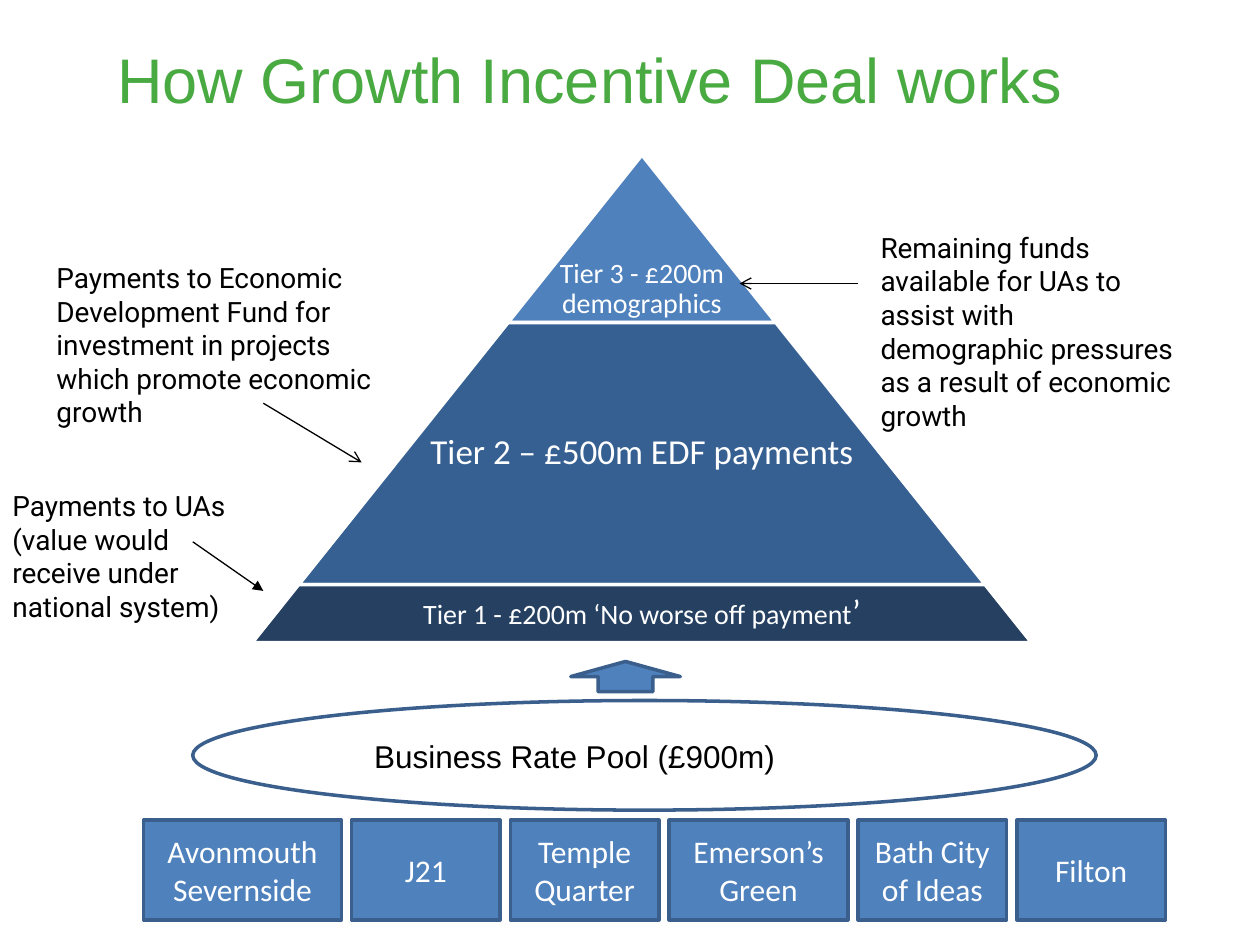
from pptx import Presentation, util as u
from pptx.dml.color import RGBColor
from pptx.enum import shapes, text
from pptx.oxml.ns import qn
from lxml import etree

COLOURS = {
    "title": "49AA42", "ink": "000000", "white": "FFFFFF",
    "blue": "4F81BD", "edge": "3A5F8C", "mid": "376092", "dark": "254061",
}
# Grid: 100 columns by 75 rows on a 10 x 7.5 inch slide
COLUMNS, ROWS = 100, 75
SHAPE = shapes.MSO_SHAPE
ANCHOR = text.MSO_ANCHOR
ALIGN = text.PP_ALIGN


class Deck:
    """Holds the style and the current slide."""

    def __init__(self):
        self.presentation = Presentation()
        self.presentation.slide_width = u.Inches(10)
        self.presentation.slide_height = u.Inches(7.5)
        self.slide = self.presentation.slides.add_slide(self.presentation.slide_layouts[5])

    def place(self, column, row, width=0, height=0):
        column_size = self.presentation.slide_width / COLUMNS
        row_size = self.presentation.slide_height / ROWS
        return (round(column * column_size), round(row * row_size),
                round(width * column_size), round(height * row_size))

    def colour(self, name):
        return RGBColor.from_string(COLOURS[name])

    def style(self, run, size, font, colour):
        run.font.size = u.Pt(size)
        run.font.name = font
        run.font.color.rgb = self.colour(colour)

    def title(self, wording, box):
        title = self.slide.shapes.title
        title.left, title.top, title.width, title.height = self.place(*box)
        frame = title.text_frame
        frame.text = wording
        frame.vertical_anchor = ANCHOR.TOP
        frame.margin_top = u.Inches(0.11)
        frame.paragraphs[0].alignment = ALIGN.LEFT
        self.style(frame.paragraphs[0].runs[0], 36, "Arial", "title")

    def shape(self, kind, box, fill=None, line="edge"):
        shape = self.slide.shapes.add_shape(kind, *self.place(*box))
        shape.shadow.inherit = False
        if fill:
            shape.fill.solid()
            shape.fill.fore_color.rgb = self.colour(fill)
        else:
            shape.fill.background()
        shape.line.color.rgb = self.colour(line)
        shape.line.width = u.Pt(2)
        return shape

    def box(self, wording, box):
        frame = self.shape(SHAPE.RECTANGLE, box, "blue").text_frame
        frame.text = wording
        frame.word_wrap = True
        frame.vertical_anchor = ANCHOR.MIDDLE
        frame.paragraphs[0].alignment = ALIGN.CENTER
        self.style(frame.paragraphs[0].runs[0], 18, "Calibri", "white")

    def note(self, wording, box, size=16, font="Roboto", colour="ink"):
        frame = self.slide.shapes.add_textbox(*self.place(*box)).text_frame
        frame.text = wording
        frame.word_wrap = True
        self.style(frame.paragraphs[0].runs[0], size, font, colour)
        return frame

    def tier_label(self, wording, box, size, anchor):
        frame = self.note(wording, box, size, "Calibri", "white")
        frame.vertical_anchor = anchor
        frame.margin_left = frame.margin_right = u.Inches(0.03)
        frame.margin_top = frame.margin_bottom = u.Inches(0.02)
        paragraph = frame.paragraphs[0]
        paragraph.alignment = ALIGN.CENTER
        paragraph.line_spacing = 0.9
        return paragraph

    def arrow(self, start, end, head="arrow"):
        connector = self.slide.shapes.add_connector(
            shapes.MSO_CONNECTOR.STRAIGHT, *self.place(*start)[:2], *self.place(*end)[:2])
        connector.line.color.rgb = self.colour("ink")
        connector.line.width = u.Pt(0.75)
        etree.SubElement(connector.line._get_or_add_ln(), qn("a:tailEnd"), type=head)
        etree.SubElement(connector._element.spPr, qn("a:effectLst"))


def main():
    deck = Deck()
    deck.title("How Growth Incentive Deal works", (8.3, 2.1, 85, 12.5))

    # Rate pool
    deck.shape(SHAPE.OVAL, (15.3, 55.6, 71.7, 8.7))
    deck.note("Business Rate Pool (£900m)", (28.7, 58, 48.8, 4), 18, "Arial")

    # Pyramid: each tier widens with its distance from the apex
    centre, apex, slope = 50.95, 12.3, 0.799
    tiers = [
        ("Tier 3 - £200m demographics", 12.3, 25.6, "blue", 21.3, 16, ANCHOR.BOTTOM),
        ("Tier 2 – £500m EDF payments", 25.6, 46.4, "mid", 35.4, 20, ANCHOR.MIDDLE),
        ("Tier 1 - £200m ‘No worse off payment", 46.4, 51, "dark", 40.2, 16, ANCHOR.MIDDLE),
    ]
    for wording, top, bottom, fill, label_width, size, anchor in tiers:
        half = slope * (bottom - apex)
        height = bottom - top
        tier = deck.shape(SHAPE.TRAPEZOID, (centre - half, top, 2 * half, height), fill, "white")
        tier.adjustments[0] = slope
        label_box = (centre - label_width / 2, top, label_width, height)
        paragraph = deck.tier_label(wording, label_box, size, anchor)
    # The last tier closes with a larger quotation mark
    quote = paragraph.add_run()
    quote.text = "’"
    deck.style(quote, 20, "Calibri", "white")

    # Callouts and their arrows
    deck.note("Remaining funds available for UAs to assist with demographic pressures "
              "as a result of economic growth", (68.9, 17.8, 26, 14.4))
    deck.note("Payments to Economic Development Fund for investment in projects "
              "which promote economic growth", (3.5, 20.2, 27.6, 14.4))
    deck.note("Payments to UAs (value would receive under national system)",
              (0, 38.3, 20.9, 11.7))
    deck.arrow((68.1, 22.5), (58.7, 22.5))
    deck.arrow((20.9, 32), (28.7, 36.7))
    deck.arrow((15.3, 43), (20.9, 46.9), "triangle")

    # Flow from the pool up to the pyramid
    deck.shape(SHAPE.UP_ARROW, (45.3, 52.5, 8.7, 2.4), "blue")

    # Enterprise areas, set side by side with equal gaps
    left, gap = 11.4, 0.8
    areas = [("Avonmouth Severnside", 15.7), ("J21", 11.8), ("Temple Quarter", 11.8),
             ("Emerson’s Green", 14.2), ("Bath City of Ideas", 11.8), ("Filton", 11.8)]
    for name, width in areas:
        deck.box(name, (left, 65.1, width, 7.9))
        left += width + gap

    deck.presentation.save("out.pptx")


if __name__ == "__main__":
    main()
